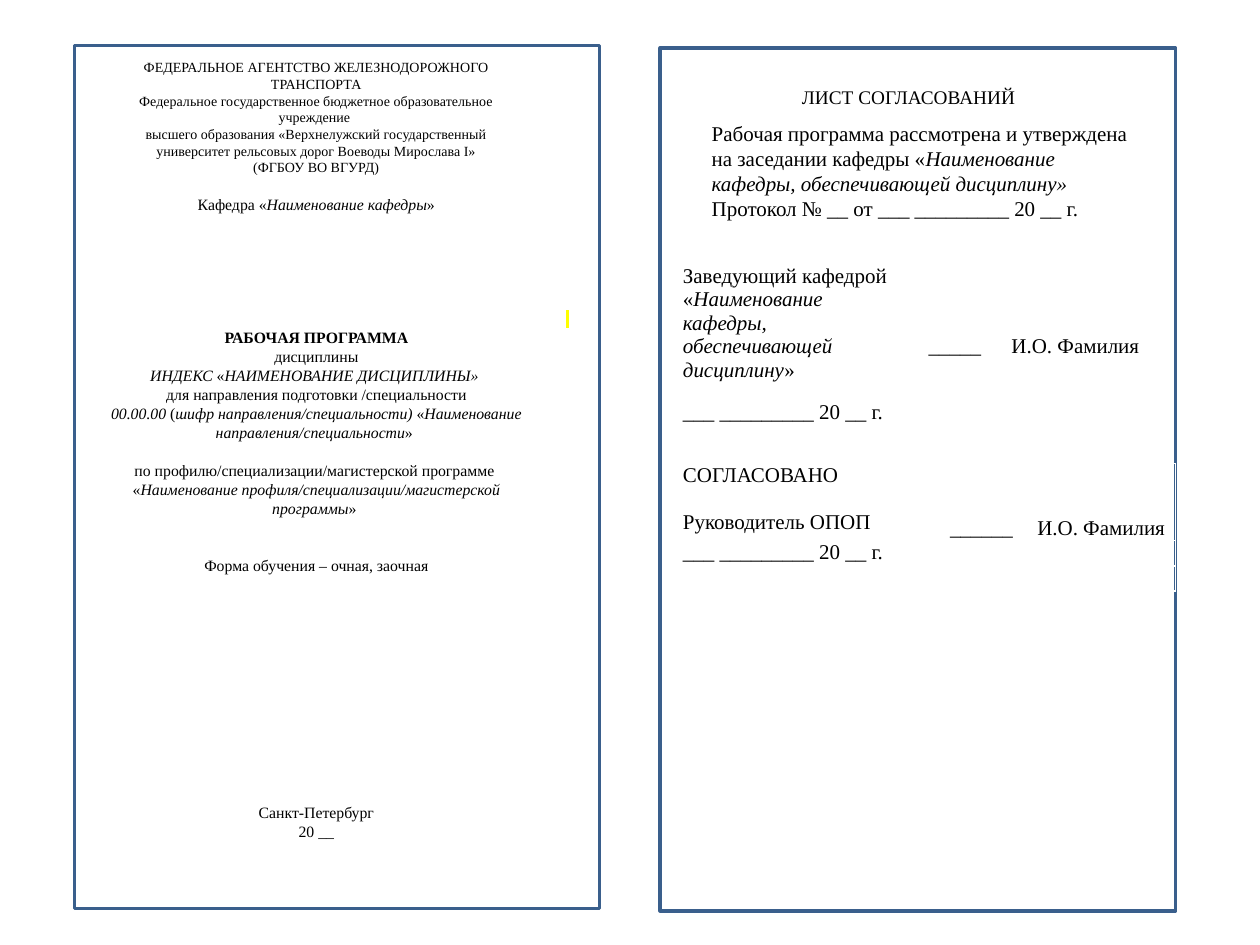
"""Build a slide with a course programme title page and its approval sheet."""
from lxml.etree import SubElement
from pptx import Presentation
from pptx.dml.color import RGBColor
from pptx.enum.shapes import MSO_SHAPE
from pptx.enum.text import MSO_ANCHOR, PP_ALIGN
from pptx.oxml.ns import qn
from pptx.util import Inches, Pt

COLORS = {"frame": "3A5F8C", "text": "000000", "mark": "FFFF00", "border": "FFFFFF"}
FONT = "Times New Roman"
LEFT, CENTER = PP_ALIGN.LEFT, PP_ALIGN.CENTER
TOP, BOTTOM = MSO_ANCHOR.TOP, MSO_ANCHOR.BOTTOM
LINE = {8: 9.5, 9: 10.85, 12: 14.3}
CELL_LINE = 13.4


def write(frame, lines, size, align, spacing):
    """Fill a text frame from (text, blank lines before); asterisks enclose italics."""
    for index, (text, gap) in enumerate(lines):
        paragraph = frame.paragraphs[0] if index == 0 else frame.add_paragraph()
        paragraph.alignment = align
        paragraph.line_spacing = Pt(spacing) if spacing > 2 else spacing
        paragraph.space_before = Pt(gap * spacing)
        paragraph.font.size = Pt(size)
        paragraph.font.name = FONT
        paragraph.font.color.rgb = RGBColor.from_string(COLORS["text"])
        for part, content in enumerate(text.split("*")):
            if content:
                run = paragraph.add_run()
                run.text = content
                if part % 2:
                    run.font.italic = True


def add_text(box, lines, size, align, spacing, wrap=True):
    """Add a text box and return its text frame."""
    frame = slide.shapes.add_textbox(*map(Inches, box)).text_frame
    frame.word_wrap = wrap
    write(frame, lines, size, align, spacing)
    return frame


presentation = Presentation()
presentation.slide_width, presentation.slide_height = Inches(10), Inches(7.5)
slide = presentation.slides.add_slide(presentation.slide_layouts[6])

for box in [(0.59, 0.36, 4.17, 6.85), (5.24, 0.38, 4.09, 6.85)]:
    page = slide.shapes.add_shape(MSO_SHAPE.RECTANGLE, *map(Inches, box))
    page.shadow.inherit = False
    page.fill.background()
    page.line.color.rgb = RGBColor.from_string(COLORS["frame"])
    page.line.width = Pt(2)

heading = [
    ("ФЕДЕРАЛЬНОЕ АГЕНТСТВО ЖЕЛЕЗНОДОРОЖНОГО ТРАНСПОРТА", 0),
    ("Федеральное государственное бюджетное образовательное учреждение ", 0),
    ("высшего образования «Верхнелужский государственный университет "
     "рельсовых дорог Воеводы Мирослава I»", 0),
    ("(ФГБОУ ВО ВГУРД)", 0),
]
programme = [
    ("Кафедра «*Наименование кафедры*»", 1),
    ("\N{NO-BREAK SPACE}", 5),
    ("РАБОЧАЯ ПРОГРАММА", 0),
    ("дисциплины", 0),
    ("*ИНДЕКС* «*НАИМЕНОВАНИЕ ДИСЦИПЛИНЫ» *", 0),
    ("для направления подготовки /специальности", 0),
    ("*00.00.00* (*шифр направления/специальности)* «*Наименование "
     "направления/специальности*» ", 0),
    ("по профилю/специализации/магистерской программе ", 1),
    ("«*Наименование профиля/специализации/магистерской программы*» ", 0),
    ("Форма обучения – очная, заочная", 2),
    ("Санкт-Петербург", 12),
    ("20 __", 0),
]
title_page = add_text((0.75, 0.42, 3.52, 6.8), heading + programme, 9, CENTER, LINE[9])
for paragraph in title_page.paragraphs[:len(heading)]:
    paragraph.font.size, paragraph.line_spacing = Pt(8), Pt(LINE[8])
marked, programme_title = title_page.paragraphs[len(heading) + 1:len(heading) + 3]
programme_title.font.bold = True
marked.alignment = LEFT
marked._p.get_or_add_pPr().set("marL", str(Inches(3.64)))
marked._p.get_or_add_pPr().set("indent", "0")
highlight = SubElement(marked.runs[0]._r.get_or_add_rPr(), qn("a:highlight"))
SubElement(highlight, qn("a:srgbClr"), val=COLORS["mark"])

add_text((6.24, 0.6, 1.98, 0.31), [("ЛИСТ СОГЛАСОВАНИЙ ", 0)], 11, CENTER, 1.15, False)
add_text((5.55, 0.91, 3.62, 1.21), [
    ("Рабочая программа рассмотрена и утверждена на заседании кафедры "
     "«*Наименование кафедры, обеспечивающей дисциплину»*", 0),
    ("Протокол № __ от ___ _________ 20 __ г.", 0),
], 12, LEFT, LINE[12])

date = [("___ _________ 20 __ г.", 0)]
head = [("Заведующий кафедрой", 0),
        ("«*Наименование кафедры, обеспечивающей дисциплину*»", 0)]
leader = [("СОГЛАСОВАНО", 0), ("Руководитель ОПОП", 1)]
name, blank = [("И.О. Фамилия", 0)], [("", 0)]
tables = [
    (2.1, [1.95, 0.6, 1.29], [1.08, 0.69], TOP, 3, [LEFT, LEFT, CENTER],
     [[head, [("_____", 0)], name], [date, blank, blank]]),
    (3.68, [2.09, 0.72, 1.18], [0.61, 0.2, 0.2], BOTTOM, 0, [LEFT, CENTER, CENTER],
     [[leader, [("______", 0)], name], [date, blank, blank], [blank] * 3]),
]
for top, widths, heights, anchor, drop, aligns, rows in tables:
    table = slide.shapes.add_table(
        len(heights), len(widths), Inches(5.34), Inches(top),
        Inches(sum(widths)), Inches(sum(heights))).table
    table.first_row = table.horz_banding = False
    for column, width in zip(table.columns, widths):
        column.width = Inches(width)
    for row_index, (height, row) in enumerate(zip(heights, rows)):
        table.rows[row_index].height = Inches(height)
        for column_index, lines in enumerate(row):
            cell = table.cell(row_index, column_index)
            signature = row_index == 0 and column_index > 0
            cell.margin_left = cell.margin_right = Inches(0.08)
            cell.margin_top = Pt(drop * CELL_LINE) if signature else 0
            cell.margin_bottom = 0
            cell.vertical_anchor = anchor if signature else TOP
            write(cell.text_frame, lines, 12, aligns[column_index], CELL_LINE)
            for side in ("lnL", "lnR", "lnT", "lnB"):
                border = SubElement(cell._tc.get_or_add_tcPr(), qn(f"a:{side}"), w=str(Pt(1)))
                SubElement(SubElement(border, qn("a:solidFill")), qn("a:srgbClr"),
                           val=COLORS["border"])
            cell.fill.background()

presentation.save("out.pptx")
